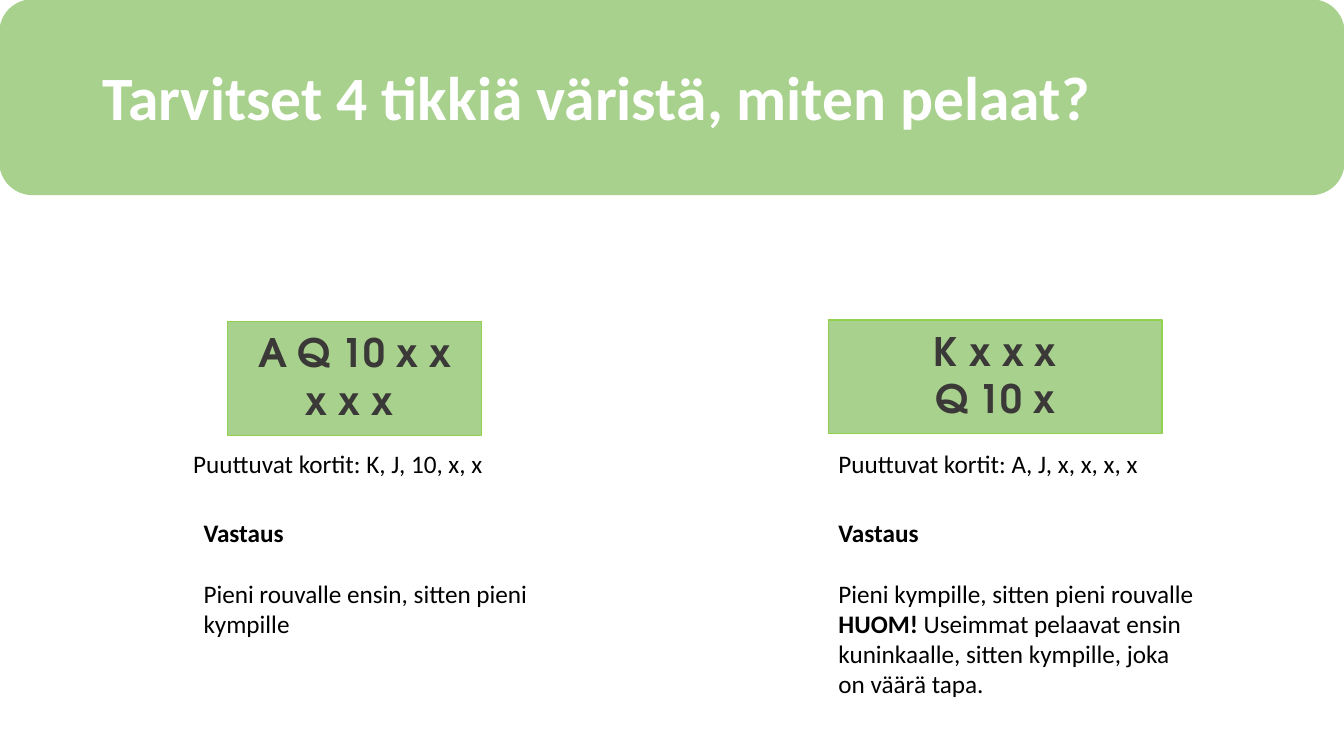
from pptx import Presentation
from pptx.dml.color import RGBColor
from pptx.enum.shapes import MSO_SHAPE
from pptx.enum.text import MSO_ANCHOR, PP_ALIGN
from pptx.util import Cm, Pt

RECTANGLE = MSO_SHAPE.RECTANGLE
ROUNDED_RECTANGLE = MSO_SHAPE.ROUNDED_RECTANGLE
MIDDLE = MSO_ANCHOR.MIDDLE
TOP = MSO_ANCHOR.TOP
LEFT = PP_ALIGN.LEFT
CENTER = PP_ALIGN.CENTER

GREEN = RGBColor(0xA9, 0xD1, 0x8E)
BRIGHT_GREEN = RGBColor(0x92, 0xD0, 0x50)
WHITE = RGBColor(0xFF, 0xFF, 0xFF)
BLACK = RGBColor(0x00, 0x00, 0x00)
CHARCOAL = RGBColor(0x3B, 0x38, 0x38)

BODY_FONT = "Calibri"
CARD_FONT = "TeX Gyre Adventor"


def add_panel(shapes, kind, box, line_color):
    panel = shapes.add_shape(kind, *map(Cm, box))
    panel.shadow.inherit = False
    panel.fill.solid()
    panel.fill.fore_color.rgb = GREEN
    panel.line.color.rgb = line_color
    panel.line.width = Pt(1)


def add_text(shapes, box, paragraphs, size=18, font=BODY_FONT, color=BLACK,
             alignment=LEFT, anchor=TOP):
    text_frame = shapes.add_textbox(*map(Cm, box)).text_frame
    text_frame.word_wrap = True
    text_frame.vertical_anchor = anchor
    for index, runs in enumerate(paragraphs):
        paragraph = text_frame.paragraphs[0] if index == 0 else text_frame.add_paragraph()
        paragraph.alignment = alignment
        for text, bold in runs:
            run = paragraph.add_run()
            run.text = text
            run.font.name = font
            run.font.size = Pt(size)
            run.font.bold = bold
            run.font.color.rgb = color
    return text_frame


def add_header(slide, box, title):
    left, top, width, height = box
    add_panel(slide.shapes, ROUNDED_RECTANGLE, box, GREEN)
    title_box = (left + 2.33, top + 0.69, width - 4.65, height - 1.22)
    text_frame = add_text(slide.shapes, title_box, [[(title, True)]], size=44,
                          color=WHITE, anchor=MIDDLE)
    text_frame.paragraphs[0].line_spacing = 0.9


def add_cards(slide, box, hands):
    left, top, width, height = box
    group = slide.shapes.add_group_shape()
    add_panel(group.shapes, RECTANGLE, box, BRIGHT_GREEN)
    text_box = (left + 0.5, top + 0.06, width - 1, height - 0.23)
    add_text(group.shapes, text_box, [[(hand, True)] for hand in hands], size=28,
             font=CARD_FONT, color=CHARCOAL, alignment=CENTER)


def add_answer(slide, box, lines):
    text_frame = add_text(slide.shapes, box, [[("Vastaus", True)], *lines])
    text_frame.paragraphs[0].space_after = Pt(22)


def add_problem(slide, cards_box, hands, missing_box, missing, answer_box, answer):
    add_cards(slide, cards_box, hands)
    add_text(slide.shapes, missing_box, [[(f"Puuttuvat kortit: {missing}", False)]])
    add_answer(slide, answer_box, answer)


def main():
    presentation = Presentation()
    presentation.slide_width = Cm(33.87)
    presentation.slide_height = Cm(19.05)
    slide = presentation.slides.add_slide(presentation.slide_layouts[6])

    add_header(slide, (0, 0, 33.87, 4.9), "Tarvitset 4 tikkiä väristä, miten pelaat?")
    add_problem(
        slide,
        (5.74, 8.1, 6.4, 2.87), ["A Q 10 x x", "x x x "],
        (4.62, 11.18, 9, 1.02), "K, J, 10, x, x",
        (4.88, 12.9, 9, 3.33),
        [[("Pieni rouvalle ensin, sitten pieni kympille", False)]],
    )
    add_problem(
        slide,
        (20.88, 8.06, 8.41, 2.87), ["K x x x", "Q 10 x"],
        (20.88, 11.18, 9, 1.02), "A, J, x, x, x, x",
        (20.88, 12.9, 9.63, 4.88),
        [
            [("Pieni kympille, sitten pieni rouvalle", False)],
            [("HUOM!", True),
             (" Useimmat pelaavat ensin kuninkaalle, sitten kympille, joka on väärä tapa.", False)],
        ],
    )
    presentation.save("out.pptx")


if __name__ == "__main__":
    main()
